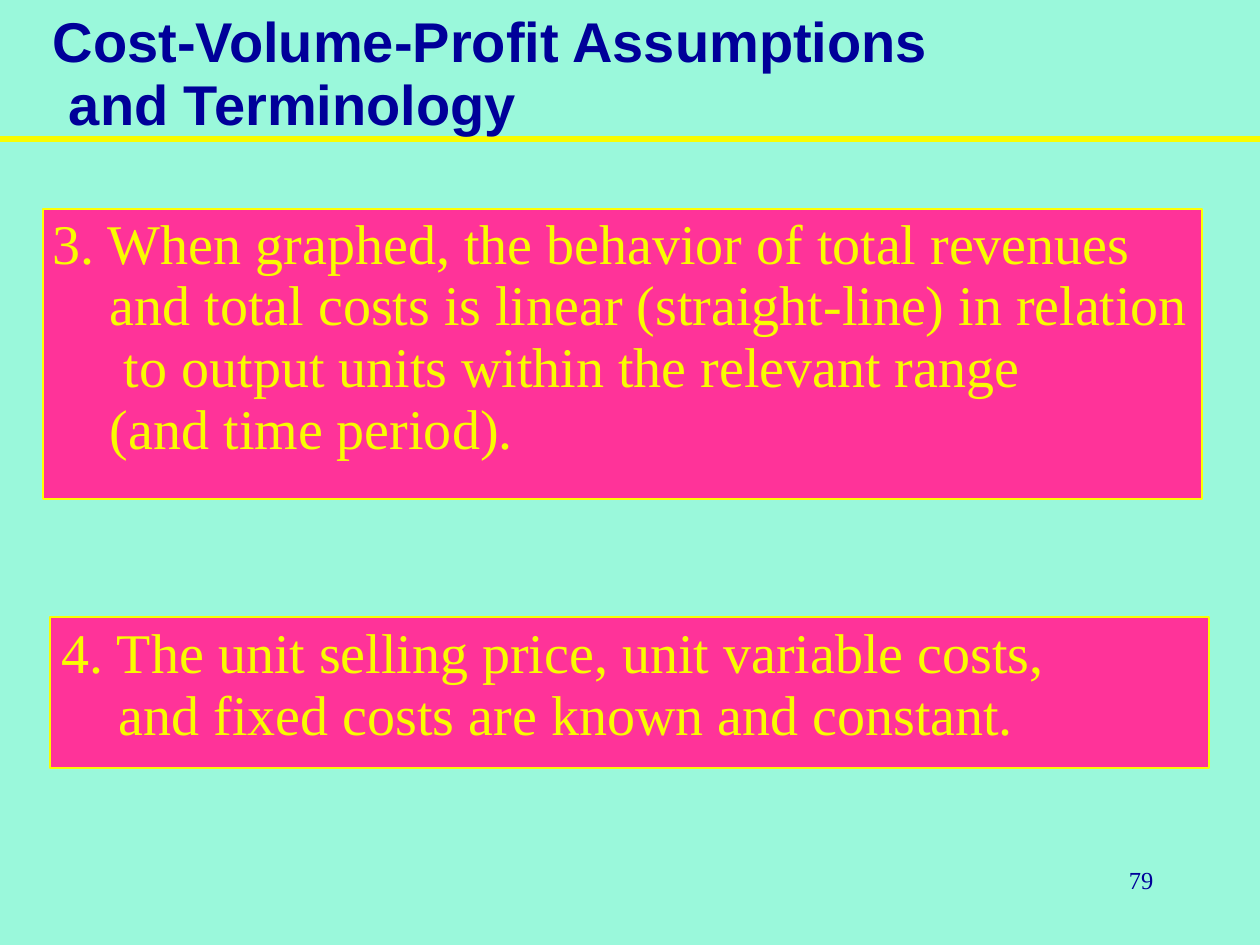
"""Build the slide on cost-volume-profit assumptions three and four."""
from lxml import etree
from pptx import Presentation, util as u
from pptx.dml.color import RGBColor
from pptx.enum import shapes, text
from pptx.oxml import ns

PX = u.Inches(1) // 126
NAVY, YELLOW, PINK, MINT = "000099", "F9FC00", "FF3399", "9AF8DB"


def color(fill, value):
    fill.solid()
    fill.fore_color.rgb = RGBColor.from_string(value)


def write(box, lines, top, before, spacing, font, size, value, bold=False):
    frame = box.text_frame
    frame.word_wrap = True
    frame.vertical_anchor = text.MSO_ANCHOR.TOP
    frame.margin_left = frame.margin_right = frame.margin_bottom = 0
    frame.margin_top = top * PX
    frame.text = "\n".join(line for line, margin, indent in lines)
    frame.paragraphs[0].space_before = u.Pt(before)
    for para, (line, margin, indent) in zip(frame.paragraphs, lines):
        para.alignment = text.PP_ALIGN.LEFT
        para.line_spacing = u.Pt(spacing)
        properties = para._p.get_or_add_pPr()
        properties.set("marL", str(margin * PX))
        properties.set("indent", str(indent * PX))
        for span in para.runs:
            span.font.name = font
            span.font.size = u.Pt(size)
            span.font.bold = bold
            color(span.font.fill, value)


deck = Presentation()
deck.slide_width, deck.slide_height = 1260 * PX, 945 * PX
page = deck.slides.add_slide(deck.slide_layouts[6])
color(page.background.fill, MINT)

rule = page.shapes.add_connector(shapes.MSO_CONNECTOR.STRAIGHT, 0, 139 * PX, 1260 * PX, 139 * PX)
color(rule.line.fill, YELLOW)
rule.line.width = u.Pt(3)
etree.SubElement(rule._element.spPr, ns.qn("a:effectLst"))

title = page.shapes.add_textbox(52 * PX, 3 * PX, 886 * PX, 133 * PX)
title_lines = [("Cost-Volume-Profit Assumptions and Terminology", 17, -16)]
write(title, title_lines, 8, 4.2, 35.9, "Arial", 32, NAVY, True)

number = page.shapes.add_textbox(1113 * PX, 866 * PX, 44 * PX, 30 * PX)
write(number, [("79", 16, 0)], 0, 0, 16.3, "Times New Roman", 14, NAVY)

assumptions = [
    (43, 209, 290, "FFFF00", 5, 3.1, 35.2, [
        ("3. When graphed, the behavior of total revenues and total costs "
         "is linear (straight-line) in relation", 67, -57),
        ("to output units within the relevant range", 81, 0),
        ("(and time period).", 67, 0),
    ]),
    (50, 617, 151, YELLOW, 6, 3.9, 35.5, [
        ("4. The unit selling price, unit variable costs,", 69, -57),
        ("and fixed costs are known and constant.", 69, 0),
    ]),
]
for left, y, height, outline, top, before, spacing, lines in assumptions:
    box = page.shapes.add_shape(
        shapes.MSO_SHAPE.RECTANGLE, left * PX, y * PX, 1159 * PX, height * PX)
    box.shadow.inherit = False
    color(box.fill, PINK)
    color(box.line.fill, outline)
    box.line.width = u.Pt(1)
    write(box, lines, top, before, spacing, "Times New Roman", 32, YELLOW)

deck.save("out.pptx")
